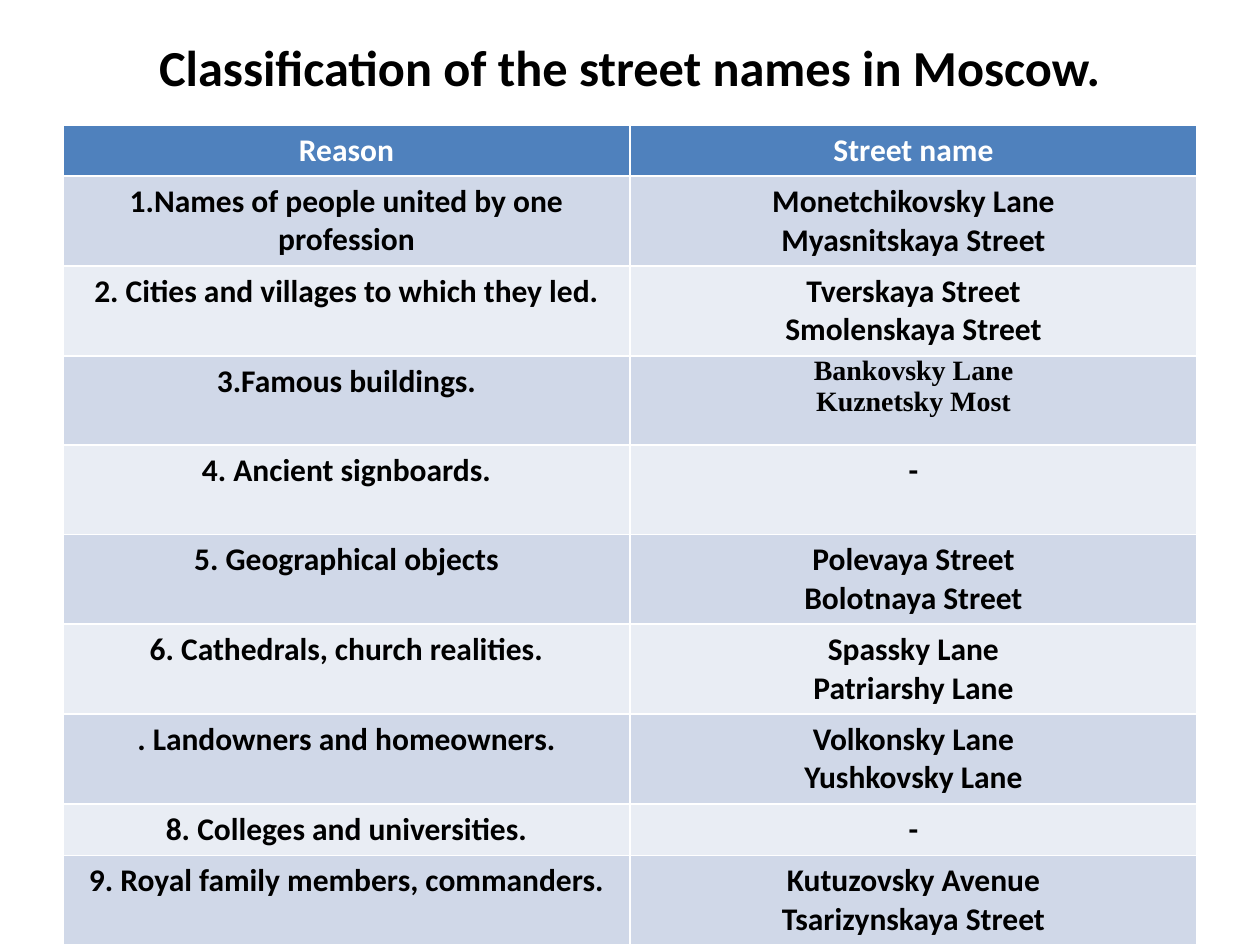
from dataclasses import dataclass

from pptx import Presentation
from pptx.dml.color import RGBColor
from pptx.enum.text import MSO_ANCHOR as Anchor, MSO_AUTO_SIZE as AutoSize, PP_ALIGN as Align
from pptx.table import _Cell as Cell
from pptx.text.text import TextFrame
from pptx.util import Cm, Pt

COLORS = {
    "header": "4F81BD",
    "odd": "D0D8E8",
    "even": "E9EDF4",
    "white": "FFFFFF",
    "black": "000000",
}
SHORT_ROW = Cm(1.03)
TALL_ROW = Cm(1.8)


@dataclass(frozen=True)
class TextStyle:
    size: float = 18
    font: str = "Calibri"
    color: str = "black"


@dataclass(frozen=True)
class StreetGroup:
    reason: str
    streets: str
    height: int = TALL_ROW
    street_style: TextStyle = TextStyle()
    street_margin: int = Cm(0.13)


HEADER = TextStyle(color="white")
TITLE = TextStyle(size=28.8)
SERIF = TextStyle(size=16, font="Times New Roman")

GROUPS = [
    StreetGroup("1.Names of people united by one profession", "Monetchikovsky Lane\nMyasnitskaya Street"),
    StreetGroup("2. Cities and villages to which they led.", "Tverskaya Street\nSmolenskaya Street"),
    StreetGroup("3.Famous buildings.", "Bankovsky Lane\nKuznetsky Most", street_style=SERIF, street_margin=Cm(0)),
    StreetGroup("4. Ancient signboards.", "-"),
    StreetGroup("5. Geographical objects", "Polevaya Street\nBolotnaya Street"),
    StreetGroup("6. Cathedrals, church realities.", "Spassky Lane\nPatriarshy Lane"),
    StreetGroup(". Landowners and homeowners.", "Volkonsky Lane\nYushkovsky Lane"),
    StreetGroup("8. Colleges and universities.", "-", height=SHORT_ROW),
    StreetGroup("9. Royal family members, commanders.", "Kutuzovsky Avenue\nTsarizynskaya Street"),
]


def write_text(text_frame: TextFrame, text: str, style: TextStyle) -> None:
    text_frame.text = text
    for paragraph in text_frame.paragraphs:
        paragraph.alignment = Align.CENTER
        for run in paragraph.runs:
            run.font.size = Pt(style.size)
            run.font.name = style.font
            run.font.bold = True
            run.font.color.rgb = RGBColor.from_string(COLORS[style.color])


def fill_cell(cell: Cell, text: str, fill: str, style: TextStyle = TextStyle()) -> None:
    write_text(cell.text_frame, text, style)
    cell.fill.solid()
    cell.fill.fore_color.rgb = RGBColor.from_string(COLORS[fill])


def add_title(slide) -> None:
    title = slide.shapes.title
    title.left, title.top, title.width, title.height = Cm(1.27), Cm(0.76), Cm(22.86), Cm(1.17)
    write_text(title.text_frame, "Classification of the street names in Moscow.", TITLE)
    title.text_frame.vertical_anchor = Anchor.MIDDLE
    title.text_frame.auto_size = AutoSize.NONE


def add_street_table(slide) -> None:
    height = SHORT_ROW + sum(group.height for group in GROUPS)
    table = slide.shapes.add_table(len(GROUPS) + 1, 2, Cm(1.27), Cm(2.52), Cm(22.86), height).table
    table.rows[0].height = SHORT_ROW
    for column, heading in enumerate(("Reason", "Street name")):
        fill_cell(table.cell(0, column), heading, "header", HEADER)
    for row, group in enumerate(GROUPS, start=1):
        table.rows[row].height = group.height
        fill = "odd" if row % 2 else "even"
        fill_cell(table.cell(row, 0), group.reason, fill)
        streets = table.cell(row, 1)
        fill_cell(streets, group.streets, fill, group.street_style)
        streets.margin_top = streets.margin_bottom = group.street_margin


def main() -> None:
    presentation = Presentation()
    presentation.slide_width, presentation.slide_height = Cm(25.4), Cm(19.05)
    slide = presentation.slides.add_slide(presentation.slide_layouts[5])
    add_title(slide)
    add_street_table(slide)
    presentation.save("out.pptx")


if __name__ == "__main__":
    main()
